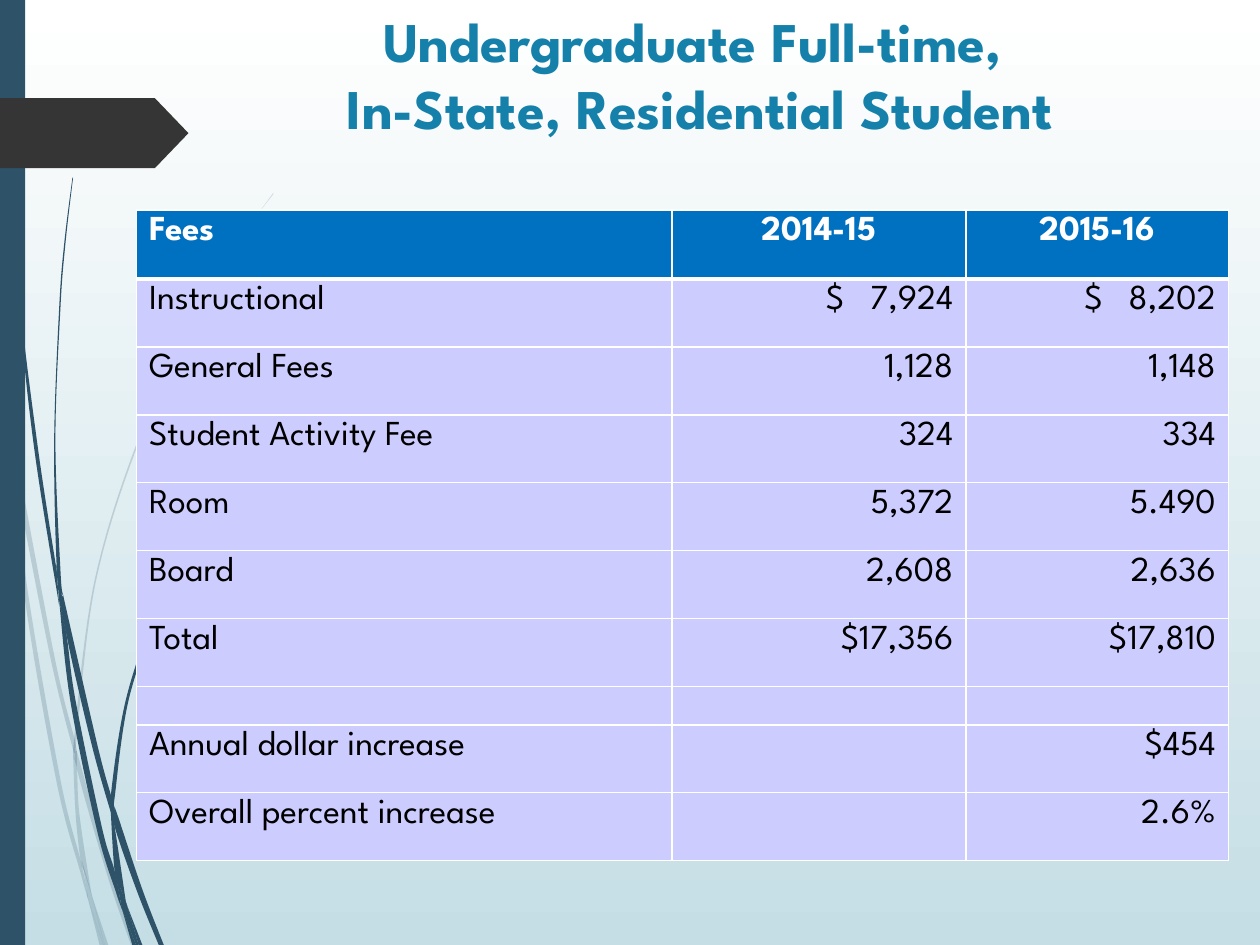
import dataclasses

import pptx
import pptx.dml.color
import pptx.enum.shapes
import pptx.enum.text
import pptx.util
from pptx.oxml import parse_xml
from pptx.oxml.ns import nsdecls, qn

ALIGN = pptx.enum.text.PP_ALIGN
SHAPES = pptx.enum.shapes.MSO_SHAPE


@dataclasses.dataclass(frozen=True)
class Theme:
    font: str = "League Spartan"
    title_size: int = 32
    body_size: int = 20
    spacer_size: int = 12
    title: str = "1581AA"
    sky: tuple = ("FFFFFF", "C5DEE5")
    grass: str = "2E5369"
    faint_opacity: int = 20
    marker: str = "353535"
    header: str = "0070C0"
    body: str = "CCCCFF"
    rule: str = "FFFFFF"
    header_text: str = "FFFFFF"
    body_text: str = "000000"


@dataclasses.dataclass(frozen=True)
class Box:
    left: float
    top: float
    width: float
    height: float

    def cells(self, columns, rows, left, top, width, height):
        """Part of this box, measured on a grid of columns by rows."""
        column, row = self.width / columns, self.height / rows
        return Box(self.left + left * column, self.top + top * row, width * column, height * row)

    def emu(self):
        return [pptx.util.Emu(round(v)) for v in (self.left, self.top, self.width, self.height)]


THEME = Theme()
GRID = (120, 90)
BLADE_GRID = (100, 75)

# Each blade is a ring of two edges, in cells of BLADE_GRID.
FAINT_BLADES = [
    ([(.8, 35), (.6, 32.2), (0, 28.2)], [(0, 29.9), (.7, 34.4), (.8, 35)]),
    ([(1, 34.5), (1.2, 37.6), (4, 52.2), (5.9, 59.9)], [(5.9, 58.6), (4.3, 52), (1, 34.5)]),
    ([(6.1, 59.6), (6.1, 61), (8.5, 69.4), (10.4, 75)], [(10.8, 75), (8.8, 69.2), (6.4, 60.7), (6.1, 59.6)]),
    ([(8.3, 75), (8.6, 75)], [(7.3, 71.1), (8.3, 75)]),
    ([(.8, 35), (1.9, 47), (4.5, 62.1), (6.4, 69.3), (7, 71.4)],
     [(6.9, 70.7), (6.4, 68.3), (4.8, 61.9), (2.2, 46.9), (1.2, 37.6), (.8, 35)]),
    ([(5.8, 59.9), (6, 64.6), (6.4, 68.3), (6.7, 69.2), (7.3, 71.1)],
     [(7.2, 70.6), (6.3, 64.6), (6.1, 61), (5.8, 59.9)]),
    ([(6.1, 59.6), (6.1, 58.4), (7.6, 46.2), (11.1, 34.9), (15.9, 24.5), (18.7, 19.8), (20.1, 17.5), (21.7, 15.4)],
     [(21.7, 15.3), (20.1, 17.5), (18.6, 19.7), (15.8, 24.4), (11, 34.8), (7.5, 46.1), (5.9, 58.4), (6.1, 59.6)]),
    ([(7, 71.4), (7.9, 75)], [(8.2, 75), (7, 71.4)]),
    ([(6.1, 60.8), (6.1, 59.6), (5.9, 58.6)], [(5.8, 59.9), (6.1, 60.8)]),
    ([(6.5, 68.3), (6.9, 70.7), (7, 71.4), (8.2, 75)], [(8.3, 75), (7.3, 71.1), (6.5, 68.3)]),
]
DARK_BLADES = [
    ([(.2, 0), (.3, 4.8), (.5, 11), (1.4, 23.3), (2.7, 35.5), (4.7, 48.1)],
     [(4.5, 45.3), (3, 35.5), (1.5, 23.2), (.6, 10.9), (.4, 4.8), (.3, 0)]),
    ([(5, 47.2), (5.3, 50.5), (7.3, 59.2), (8.8, 64.5)], [(8.8, 63.1), (7.7, 59), (5, 47.2)]),
    ([(9.1, 64.1), (9.1, 65.6), (10.9, 70.8), (12.6, 75)], [(13, 75), (11.3, 70.6), (9.4, 64.9), (9.1, 64.1)]),
    ([(4.7, 47.7), (5.6, 55.7), (7.7, 65.9), (9.2, 70.8), (9.7, 72.2)],
     [(9.6, 71.7), (9.1, 69.1), (8.1, 65.7), (6, 55.6), (5.3, 50.5), (4.7, 47.7)]),
    ([(5, 47.2), (4.8, 45.3), (4.4, 34.9), (4.8, 24.4), (5.2, 19.3), (5.8, 14.1)],
     [(5.75, 14.1), (5.1, 19.3), (4.7, 24.4), (4.3, 34.9), (4.5, 44.9), (4.9, 47.2)]),
    ([(11, 75), (11.3, 75)], [(10.1, 71.9), (11, 75)]),
    ([(4.7, 47.7), (5.3, 50.5)], [(5, 47.2), (4.9, 47.2), (4.5, 44.9), (4.5, 45.3), (4.7, 47.7)]),
    ([(9.1, 64.1), (9.1, 63.3), (10.3, 55.2), (13.1, 47.6), (16.9, 40.6), (19.1, 37.4), (21.6, 34.4)],
     [(21.5, 34.4), (19.1, 37.3), (16.8, 40.5), (12.9, 47.4), (10.1, 55.1), (8.8, 63.1), (9.1, 64.1)]),
    ([(9.7, 72.2), (10.5, 75)], [(10.8, 75), (9.7, 72.2)]),
    ([(8.8, 64.5), (9.1, 69.1), (9.6, 70.6), (10.1, 71.9)], [(10, 71.6), (9.1, 65.6), (8.8, 64.5)]),
    ([(8.8, 64.5), (9.1, 65.6)], [(9.1, 64.1), (8.8, 63.1), (8.8, 64.5)]),
    ([(9.1, 69.1), (9.6, 71.7), (9.7, 72.2), (10.8, 75)], [(11, 75), (10.1, 71.9), (9.6, 70.6), (9.1, 69.1)]),
]

TITLE_LINES = ("Undergraduate Full-time,", " In-State, Residential Student")
COLUMN_WIDTHS = (51, 28, 25)
ROW_HEIGHTS = [6.6] + [6.48] * 6 + [3.68] + [6.48] * 2
FEES = [
    ("Fees", "2014-15", "2015-16"),
    ("Instructional", "$   7,924", "$   8,202"),
    ("General Fees", "1,128", "1,148"),
    ("Student Activity Fee", "324", "334"),
    ("Room", "5,372", "5.490"),
    ("Board", "2,608", "2,636"),
    ("Total", "$17,356", "$17,810"),
    ("", "", ""),
    ("Annual dollar increase", "", "$454"),
    ("Overall percent increase", "", "2.6%"),
]


def rgb(value):
    return pptx.dml.color.RGBColor.from_string(value)


def paint(shape, color, opacity=100):
    shape.shadow.inherit = False
    shape.fill.solid()
    shape.fill.fore_color.rgb = rgb(color)
    shape.line.fill.background()
    if opacity < 100:
        tint = shape._element.spPr.find(".//" + qn("a:srgbClr"))
        tint.append(parse_xml(f'<a:alpha {nsdecls("a")} val="{opacity * 1000}"/>'))


def write(paragraph, text, size, color, bold=False):
    run = paragraph.add_run()
    run.text = text
    run.font.name, run.font.size, run.font.bold = THEME.font, pptx.util.Pt(size), bold
    run.font.color.rgb = rgb(color)


def bend(blade, edges):
    """Turn the straight steps along each edge into Catmull-Rom curves."""
    nodes = list(blade._element.spPr.iter(qn("a:pt")))
    spots = [(int(node.get("x")), int(node.get("y"))) for node in nodes]
    start = 0
    for edge in edges:
        end = start + len(edge)
        padded = [spots[start], *spots[start:end], spots[end - 1]]
        for node, a, b, c, d in zip(nodes[start + 1:end], padded, padded[1:], padded[2:], padded[3:]):
            leave = [q + (r - p) / 6 for p, q, r in zip(a, b, c)]
            arrive = [r - (s - q) / 6 for q, r, s in zip(b, c, d)]
            handles = "".join(f'<a:pt x="{round(x)}" y="{round(y)}"/>' for x, y in (leave, arrive, c))
            step = node.getparent()
            step.getparent().replace(step, parse_xml(
                f'<a:cubicBezTo {nsdecls("a")}>{handles}</a:cubicBezTo>'))
        start = end


def add_grass(slide, box, blades, opacity):
    column, row = box.width / BLADE_GRID[0], box.height / BLADE_GRID[1]
    for edges in blades:
        outline = [(box.left + x * column, box.top + y * row) for edge in edges for x, y in edge]
        builder = slide.shapes.build_freeform(*outline[0])
        builder.add_line_segments(outline[1:], close=False)
        blade = builder.convert_to_shape()
        bend(blade, edges)
        paint(blade, THEME.grass, opacity)


def add_backdrop(slide, box):
    sky = slide.background.fill
    sky.gradient()
    sky.gradient_angle = 270
    for stop, color, position in zip(sky.gradient_stops, THEME.sky, (0, 1)):
        stop.color.rgb, stop.position = rgb(color), position
    add_grass(slide, box, FAINT_BLADES, THEME.faint_opacity)
    add_grass(slide, box, DARK_BLADES, 100)
    band = box.cells(*GRID, 0, 0, 2.4, 90)
    paint(slide.shapes.add_shape(SHAPES.RECTANGLE, *band.emu()), THEME.grass)
    marker = slide.shapes.add_shape(SHAPES.PENTAGON, *box.cells(*GRID, 0, 9.36, 17.95, 6.65).emu())
    marker.adjustments[0] = 0.48
    paint(marker, THEME.marker)


def add_title(slide, box):
    frame = slide.shapes.add_textbox(*box.emu()).text_frame
    frame.word_wrap = True
    frame.vertical_anchor = pptx.enum.text.MSO_ANCHOR.TOP
    heading = frame.paragraphs[0]
    heading.alignment = ALIGN.CENTER
    for index, line in enumerate(TITLE_LINES):
        if index:
            heading.add_line_break()
        write(heading, line, THEME.title_size, THEME.title, bold=True)


def rule_cell(cell, is_header):
    properties = cell._tc.get_or_add_tcPr()
    for position, side in enumerate(("lnL", "lnR", "lnT", "lnB")):
        points = 3 if is_header and side == "lnB" else 1
        properties.insert(position, parse_xml(
            f'<a:{side} {nsdecls("a")} w="{pptx.util.Pt(points)}"><a:solidFill>'
            f'<a:srgbClr val="{THEME.rule}"/></a:solidFill></a:{side}>'))


def fill_cell(cell, text, is_header, is_label):
    cell.fill.solid()
    cell.fill.fore_color.rgb = rgb(THEME.header if is_header else THEME.body)
    rule_cell(cell, is_header)
    entry = cell.text_frame.paragraphs[0]
    entry.alignment = ALIGN.LEFT if is_label else ALIGN.CENTER if is_header else ALIGN.RIGHT
    if text:
        write(entry, text, THEME.body_size, THEME.header_text if is_header else THEME.body_text, is_header)
    else:
        entry._p.append(parse_xml(f'<a:endParaRPr {nsdecls("a")} sz="{THEME.spacer_size * 100}"/>'))


def add_fee_table(slide, box):
    fees = slide.shapes.add_table(len(FEES), len(COLUMN_WIDTHS), *box.emu()).table
    for column, share in zip(fees.columns, COLUMN_WIDTHS):
        column.width = round(box.width * share / sum(COLUMN_WIDTHS))
    for r, (share, entries) in enumerate(zip(ROW_HEIGHTS, FEES)):
        fees.rows[r].height = round(box.height * share / sum(ROW_HEIGHTS))
        for c, text in enumerate(entries):
            fill_cell(fees.cell(r, c), text, r == 0, c == 0)


def main():
    deck = pptx.Presentation()
    deck.slide_width, deck.slide_height = pptx.util.Inches(10), pptx.util.Inches(7.5)
    slide = deck.slides.add_slide(deck.slide_layouts[6])
    page = Box(0, 0, deck.slide_width, deck.slide_height)
    add_backdrop(slide, page)
    add_title(slide, page.cells(*GRID, 15, 0, 102, 18))
    add_fee_table(slide, page.cells(*GRID, 13, 20, 104, 62))
    deck.save("out.pptx")


if __name__ == "__main__":
    main()
